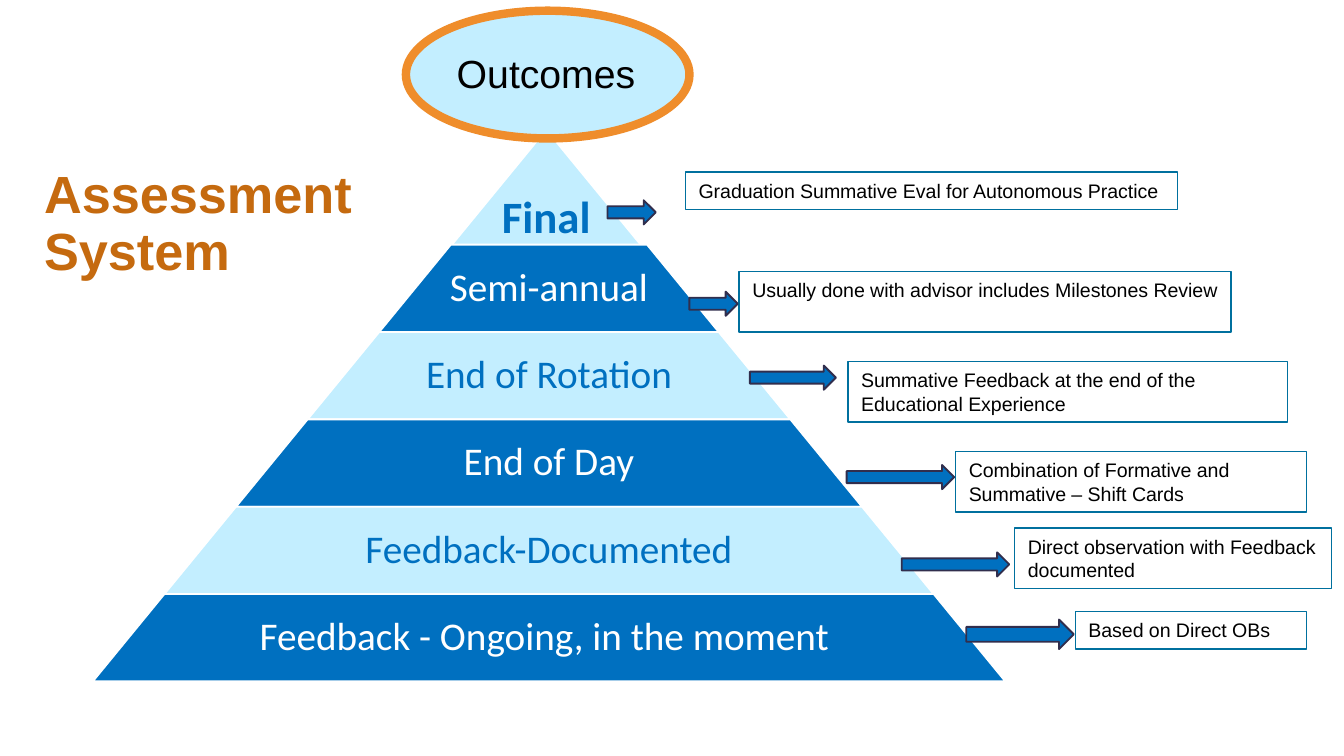
from dataclasses import dataclass

from pptx import Presentation
from pptx.dml.color import RGBColor
from pptx.enum.shapes import MSO_SHAPE
from pptx.enum.text import MSO_ANCHOR, PP_ALIGN
from pptx.util import Emu, Pt

PX = 9144  # 100 px to the inch
PAGE_WIDTH = 1000
TRAPEZOID, ELLIPSE = MSO_SHAPE.TRAPEZOID, MSO_SHAPE.OVAL
RECTANGLE, ARROW = MSO_SHAPE.RECTANGLE, MSO_SHAPE.RIGHT_ARROW
TOP, MIDDLE, BOTTOM = MSO_ANCHOR.TOP, MSO_ANCHOR.MIDDLE, MSO_ANCHOR.BOTTOM
LEFT, CENTER = PP_ALIGN.LEFT, PP_ALIGN.CENTER


@dataclass(frozen=True)
class Theme:
    pale: str = "C3EEFF"
    blue: str = "0070C0"
    white: str = "FFFFFF"
    black: str = "000000"
    brown: str = "C56A0F"
    orange: str = "EF8D2B"
    note_line: str = "00709E"
    arrow_line: str = "312E4D"
    sans: str = "Arial"
    tier_font: str = "Calibri"
    title_size: float = 28
    peak_size: float = 24
    label_size: float = 21
    note_size: float = 10.5


THEME = Theme()

# Tier labels from the base upward; the peak is drawn on its own
TIERS = ["Feedback - Ongoing, in the moment ", "Feedback-Documented",
         "End of Day", "End of Rotation", "Semi-annual"]
TIER_HEIGHT = 65
TIER_SLOPE = 0.82

# Note text, note box and arrow box, relative to the callout region
CALLOUTS = [
    ("Graduation Summative Eval for Autonomous Practice",
     (58, 0, 366, 28), (0, 21, 36, 18)),
    ("Usually done with advisor includes Milestones Review",
     (98, 74, 366, 45), (61, 89, 36, 18)),
    ("Summative Feedback at the end of the Educational Experience",
     (179, 141, 327, 45), (106, 144, 64, 18)),
    ("Combination of Formative and Summative – Shift Cards",
     (259, 208, 261, 45), (178, 218, 80, 18)),
    ("Direct observation with Feedback documented",
     (303, 265, 236, 45), (219, 283, 80, 18)),
    ("Based on Direct OBs",
     (348, 327, 172, 28), (267, 333, 80, 22)),
]


def to_emu(box):
    return [Emu(round(value * PX)) for value in box]


def inside(region, box):
    """Shift a box from region coordinates to page coordinates."""
    return (region[0] + box[0], region[1] + box[1], box[2], box[3])


def add_shape(page, kind, box, fill=None, line=None, weight=1):
    shape = page.shapes.add_shape(kind, *to_emu(box))
    shape.shadow.inherit = False
    if fill:
        shape.fill.solid()
        shape.fill.fore_color.rgb = RGBColor.from_string(fill)
    else:
        shape.fill.background()
    if line:
        shape.line.color.rgb = RGBColor.from_string(line)
        shape.line.width = Pt(weight)
    else:
        shape.line.fill.background()
    return shape


def write(shape, text, font, size, color, bold=False, align=LEFT,
          anchor=TOP, insets=(10, 5, 8, 5), spacing=1.0):
    frame = shape.text_frame
    frame.word_wrap = True
    frame.vertical_anchor = anchor
    (frame.margin_left, frame.margin_top,
     frame.margin_right, frame.margin_bottom) = to_emu(insets)
    para = frame.paragraphs[0]
    para.alignment = align
    para.line_spacing = spacing
    span = para.add_run()
    span.text = text
    span.font.name = font
    span.font.size = Pt(size)
    span.font.bold = bold
    span.font.color.rgb = RGBColor.from_string(color)


def add_title(page, box):
    title = page.shapes.add_textbox(*to_emu(box))
    write(title, "Assessment System", THEME.sans, THEME.title_size,
          THEME.brown, bold=True, anchor=MIDDLE, spacing=0.9)


def add_tier(page, box, fill):
    tier = add_shape(page, TRAPEZOID, box, fill, THEME.white)
    tier.adjustments[0] = TIER_SLOPE


def add_pyramid(page, region):
    width, height = region[2:]

    # Peak
    peak = inside(region, (264, 0, 147, 89))
    add_tier(page, peak, THEME.pale)
    label = page.shapes.add_textbox(*to_emu(peak))
    write(label, "Final", THEME.tier_font, THEME.peak_size, THEME.blue,
          bold=True, align=CENTER, anchor=BOTTOM, insets=(3, 3, 3, 5),
          spacing=0.9)

    # Tiers, each one narrower than the tier below it
    for level, text in reversed(list(enumerate(TIERS))):
        inset = level * TIER_HEIGHT * TIER_SLOPE
        tier_width = width - 2 * inset
        top = height - (level + 1) * TIER_HEIGHT
        fill, color = ((THEME.pale, THEME.blue) if level % 2
                       else (THEME.blue, THEME.white))
        add_tier(page, inside(region, (inset, top, tier_width, TIER_HEIGHT)),
                 fill)
        label_width = 0.65 * tier_width
        label_box = ((width - label_width) / 2, top, label_width, TIER_HEIGHT)
        label = page.shapes.add_textbox(*to_emu(inside(region, label_box)))
        write(label, text, THEME.tier_font, THEME.label_size, color,
              align=CENTER, anchor=MIDDLE, insets=(3, 3, 3, 3), spacing=0.9)


def add_outcomes(page, region):
    add_shape(page, ELLIPSE, region, THEME.pale, THEME.orange, 4.5)
    label = add_shape(page, RECTANGLE, inside(region, (28, 24, 158, 45)),
                      THEME.pale)
    write(label, "Outcomes", THEME.sans, THEME.label_size, THEME.black)


def add_callouts(page, region):
    # Notes
    for text, note_box, _ in CALLOUTS:
        note = add_shape(page, RECTANGLE, inside(region, note_box),
                         line=THEME.note_line, weight=0.75)
        write(note, text, THEME.sans, THEME.note_size, THEME.black)

    # Arrows from the tiers to the notes
    for _, _, arrow_box in CALLOUTS:
        add_shape(page, ARROW, inside(region, arrow_box), THEME.blue,
                  THEME.arrow_line)


def main():
    deck = Presentation()
    deck.slide_width = Emu(PAGE_WIDTH * PX)
    deck.slide_height = Emu(PAGE_WIDTH * PX * 9 // 16)
    page = deck.slides.add_slide(deck.slide_layouts[6])
    add_title(page, (23, 113, 250, 109))
    add_pyramid(page, (69, 97, 679, 410))
    add_outcomes(page, (302, 8, 211, 95))
    add_callouts(page, (452, 128, 539, 355))
    deck.save("out.pptx")


if __name__ == "__main__":
    main()
